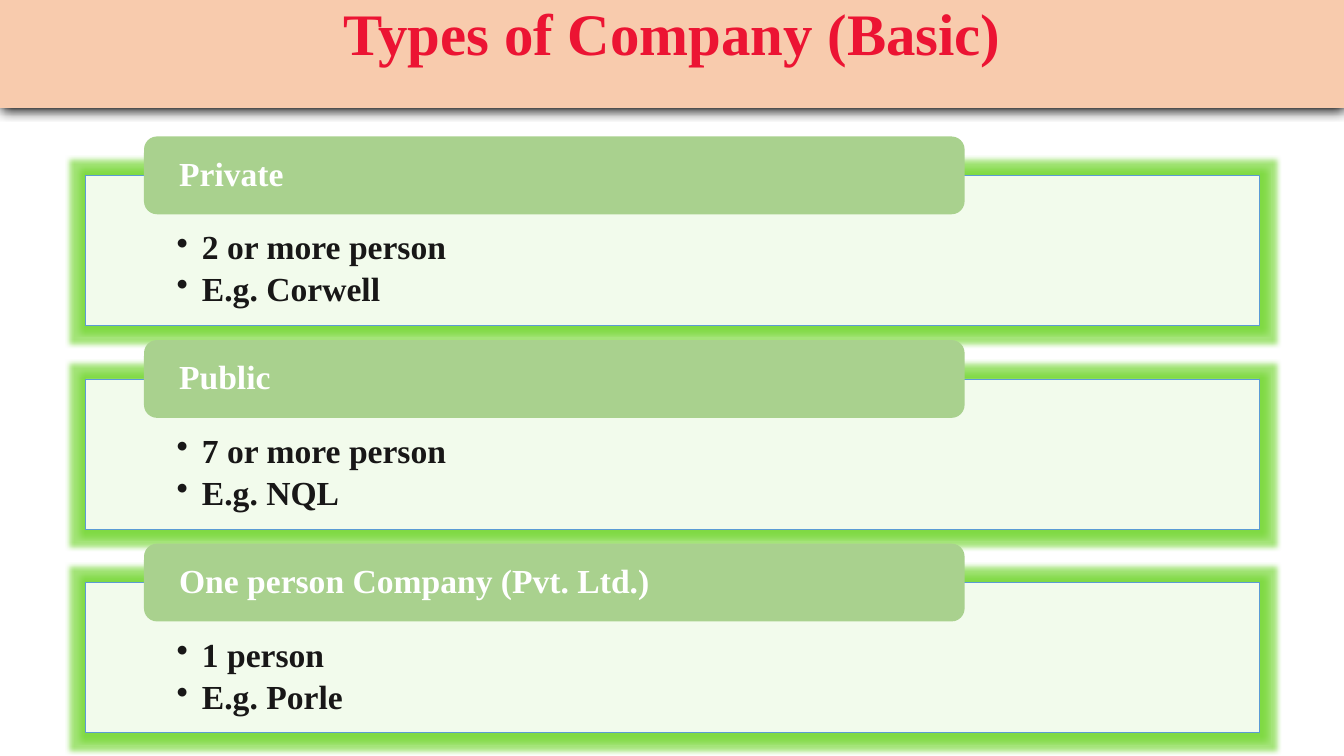
from dataclasses import dataclass

import pptx
import pptx.dml.color
import pptx.enum.shapes
import pptx.enum.text
import pptx.oxml
import pptx.oxml.ns
import pptx.util
from pptx.util import Cm

COLORS = {
    "banner": "F8CBAD", "title": "EC1433", "box": "FFFFFF", "border": "5B9BD5",
    "glow": "68D321", "header": "A9D18E", "header_text": "FFFFFF",
    "body_text": "181717", "shadow": "000000",
}
FONT = "Times New Roman"
SLIDE_W, SLIDE_H = Cm(33.87), Cm(19.05)
FIRST_TOP, PITCH = 3.44, 5.13
RECT = pptx.enum.shapes.MSO_SHAPE.RECTANGLE
ROUNDED = pptx.enum.shapes.MSO_SHAPE.ROUNDED_RECTANGLE
ANCHOR = pptx.enum.text.MSO_ANCHOR
ALIGN = pptx.enum.text.PP_ALIGN


@dataclass(frozen=True)
class CompanyType:
    name: str
    facts: tuple[str, ...]


COMPANY_TYPES = [
    CompanyType("Private", ("2 or more person", "E.g. Corwell")),
    CompanyType("Public", ("7 or more person", "E.g. NQL")),
    CompanyType("One person Company (Pvt. Ltd.)", ("1 person", "E.g. Porle")),
]


def rgb(name: str) -> pptx.dml.color.RGBColor:
    return pptx.dml.color.RGBColor.from_string(COLORS[name])


def xml(text: str):
    """Parse one DrawingML element whose first tag lacks its namespace."""
    tag_end = min(i for i in (text.find(" "), text.find("/>")) if i > 0)
    ns = pptx.oxml.ns.nsdecls("a")
    return pptx.oxml.parse_xml(f"{text[:tag_end]} {ns}{text[tag_end:]}")


def add_block(slide, kind, left: float, top: float, width: float,
              height: float, fill: str):
    s = slide.shapes.add_shape(kind, Cm(left), Cm(top), Cm(width), Cm(height))
    s.shadow.inherit = False
    s.fill.solid()
    s.fill.fore_color.rgb = rgb(fill)
    s.line.fill.background()
    return s


def add_effect(s, effect: str) -> None:
    s._element.spPr.find(pptx.oxml.ns.qn("a:effectLst")).append(xml(effect))


def add_text(s, *lines: str, color: str, size: float = 24, align=ALIGN.LEFT,
             anchor=ANCHOR.TOP, insets=(0.25, 0.13, 0.25, 0.13),
             space_after: float = 0, bullet: bool = False) -> None:
    """Fill a shape with bold paragraphs; insets are left, top, right, bottom in cm."""
    tf = s.text_frame
    tf.word_wrap = True
    tf.vertical_anchor = anchor
    tf.margin_left, tf.margin_top, tf.margin_right, tf.margin_bottom = map(Cm, insets)
    for i, line in enumerate(lines):
        p = tf.paragraphs[0] if i == 0 else tf.add_paragraph()
        p.alignment = align
        p.line_spacing = 0.9
        p.space_after = pptx.util.Pt(space_after)
        if bullet:
            pPr = p._p.get_or_add_pPr()
            pPr.set("marL", str(Cm(0.64)))
            pPr.set("indent", str(-Cm(0.64)))
            pPr.append(xml('<a:buChar char="•"/>'))
        r = p.add_run()
        r.text = line
        r.font.name = FONT
        r.font.size = pptx.util.Pt(size)
        r.font.bold = True
        r.font.color.rgb = rgb(color)


def add_banner(slide) -> None:
    s = add_block(slide, RECT, 0, 0, SLIDE_W.cm, 2.72, "banner")
    add_effect(s, f'<a:outerShdw blurRad="{pptx.util.Pt(8.5)}" dist="{pptx.util.Pt(1)}"'
                  f' dir="5400000" algn="t" rotWithShape="0">'
                  f'<a:srgbClr val="{COLORS["shadow"]}"/></a:outerShdw>')
    add_text(s, "Types of Company (Basic)", color="title", size=42, align=ALIGN.CENTER)


def add_company_type(slide, company: CompanyType, top: float) -> None:
    box = add_block(slide, RECT, 2.16, top + 0.98, 29.57, 3.78, "box")
    box.line.color.rgb = rgb("border")
    box.line.width = pptx.util.Pt(0.5)
    color = box._element.spPr.find(pptx.oxml.ns.qn("a:solidFill"))[0]
    color.append(xml('<a:alpha val="90000"/>'))
    add_effect(box, f'<a:glow rad="{pptx.util.Pt(8)}"><a:srgbClr val="{COLORS["glow"]}">'
                    f'<a:alpha val="60000"/></a:srgbClr></a:glow>')
    add_text(box, *company.facts, color="body_text", insets=(2.29, 1.4, 2.29, 0.48),
             space_after=4, bullet=True)

    header = add_block(slide, ROUNDED, 3.63, top, 20.68, 1.96, "header")
    add_text(header, company.name, color="header_text", anchor=ANCHOR.MIDDLE,
             insets=(0.79, 0, 0.79, 0))


def main() -> None:
    prs = pptx.Presentation()
    prs.slide_width, prs.slide_height = SLIDE_W, SLIDE_H
    slide = prs.slides.add_slide(prs.slide_layouts[6])
    add_banner(slide)
    for i, company in enumerate(COMPANY_TYPES):
        add_company_type(slide, company, FIRST_TOP + i * PITCH)
    prs.save("out.pptx")


if __name__ == "__main__":
    main()
